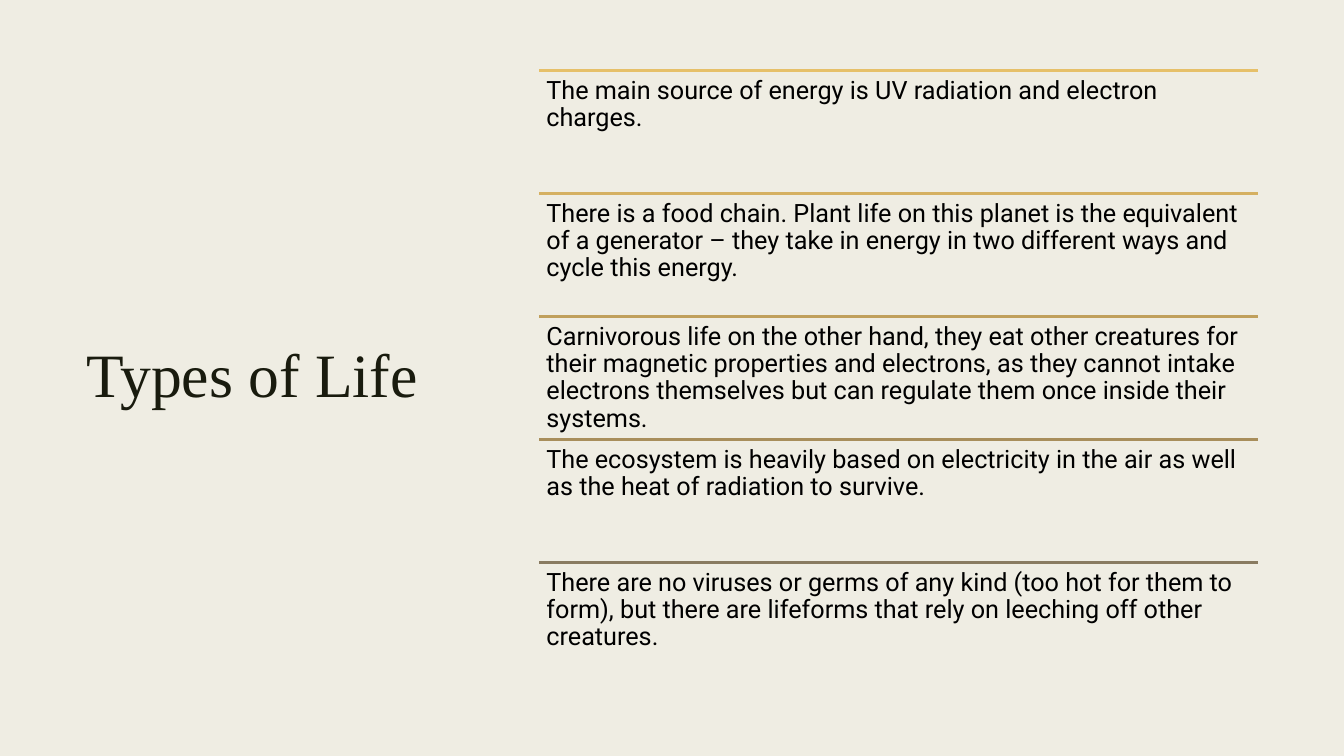
from pptx import Presentation
from pptx.dml.color import RGBColor
from pptx.enum.shapes import MSO_CONNECTOR as Link
from pptx.enum.text import MSO_ANCHOR as Anchor, MSO_AUTO_SIZE as Fit, PP_ALIGN as Align
from pptx.oxml.ns import qn
from pptx.util import Inches, Pt
from lxml.etree import SubElement

CREAM = RGBColor(0xEF, 0xED, 0xE3)
DARK = RGBColor(0x19, 0x1B, 0x0E)
BLACK = RGBColor(0, 0, 0)
GOLDS = [
    RGBColor(0xE6, 0xC0, 0x69),
    RGBColor(0xD5, 0xB0, 0x61),
    RGBColor(0xC0, 0xA0, 0x5C),
    RGBColor(0xA8, 0x8E, 0x5B),
    RGBColor(0x89, 0x7B, 0x61),
]
FACTS = [
    "The main source of energy is UV radiation and electron charges.",
    "There is a food chain. Plant life on this planet is the equivalent of a generator – "
    "they take in energy in two different ways and cycle this energy.",
    "Carnivorous life on the other hand, they eat other creatures for their magnetic "
    "properties and electrons, as they cannot intake electrons themselves but can "
    "regulate them once inside their systems.",
    "The ecosystem is heavily based on electricity in the air as well as the heat of "
    "radiation to survive.",
    "There are no viruses or germs of any kind (too hot for them to form), but there are "
    "lifeforms that rely on leeching off other creatures.",
]
EDGE, COL, ROW = 0.7, 0.31, 1.22
LEFT, SPAN = 15, 23

HEAD = {
    "frame": {"vertical_anchor": Anchor.MIDDLE, "word_wrap": True, "auto_size": Fit.NONE},
    "para": {"alignment": Align.CENTER, "line_spacing": 0.89},
    "font": {"name": "Times New Roman", "size": Pt(44)},
    "color": DARK,
}
PAD = Inches(0.07)
BODY = {
    "frame": {
        "vertical_anchor": Anchor.TOP, "word_wrap": True, "auto_size": Fit.NONE,
        "margin_left": PAD, "margin_right": PAD, "margin_top": PAD, "margin_bottom": PAD,
    },
    "para": {"alignment": Align.LEFT, "line_spacing": 0.9, "space_after": Pt(6.3)},
    "font": {"name": "Roboto", "size": Pt(18)},
    "color": BLACK,
}


def apply(item, values):
    for name, value in values.items():
        setattr(item, name, value)


class Page:
    def __init__(self, deck):
        self.slide = deck.slides.add_slide(deck.slide_layouts[5])
        fill = self.slide.background.fill
        fill.solid()
        fill.fore_color.rgb = CREAM

    def place(self, col, row, wide, high):
        return (Inches(EDGE + col * COL), Inches(EDGE + row * ROW),
                Inches(wide * COL), Inches(high * ROW))

    def letter(self, shape, text, style):
        frame = shape.text_frame
        apply(frame, style["frame"])
        para = frame.paragraphs[0]
        apply(para, style["para"])
        run = para.add_run()
        run.text = text
        apply(run.font, style["font"])
        run.font.color.rgb = style["color"]

    def title(self, text, *cell):
        shape = self.slide.shapes.title
        apply(shape, dict(zip(("left", "top", "width", "height"), self.place(*cell))))
        self.letter(shape, text, HEAD)

    def text(self, text, *cell):
        self.letter(self.slide.shapes.add_textbox(*self.place(*cell)), text, BODY)

    def rule(self, color, col, row, wide):
        x, y, w, _ = self.place(col, row, wide, 0)
        line = self.slide.shapes.add_connector(Link.STRAIGHT, x, y, x + w, y)
        line.line.color.rgb = color
        line.line.width = Pt(2.75)
        SubElement(line._element.spPr, qn("a:effectLst"))


def main():
    deck = Presentation()
    apply(deck, {"slide_width": Inches(13.33), "slide_height": Inches(7.5)})
    page = Page(deck)
    page.title("Types of Life", 0, 0, 11.65, len(FACTS))
    for row, (fact, gold) in enumerate(zip(FACTS, GOLDS)):
        page.rule(gold, LEFT, row, SPAN)
        page.text(fact, LEFT, row, SPAN, 1)
    deck.save("out.pptx")


if __name__ == "__main__":
    main()
